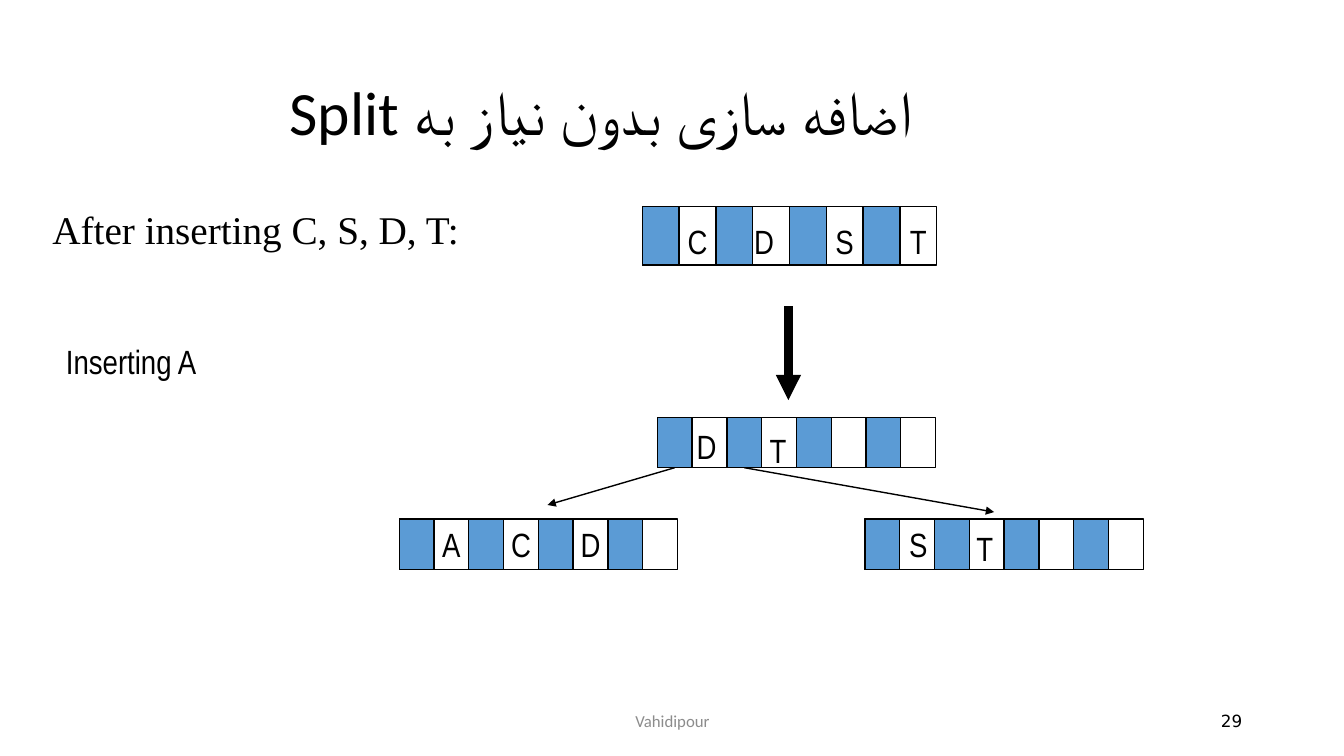
from pptx import Presentation
from pptx.dml.color import RGBColor
from pptx.enum.shapes import MSO_CONNECTOR, MSO_SHAPE
from pptx.enum.text import MSO_ANCHOR, PP_ALIGN
from pptx.oxml.ns import qn
from pptx.util import Inches, Pt
from lxml import etree

BLACK = RGBColor(0, 0, 0)
BLUE = RGBColor(0x5B, 0x9B, 0xD5)
GREY = RGBColor(0x8C, 0x8C, 0x8C)
RECT = MSO_SHAPE.RECTANGLE
STRAIGHT = MSO_CONNECTOR.STRAIGHT
CENTER, RIGHT = PP_ALIGN.CENTER, PP_ALIGN.RIGHT
TOP, MIDDLE = MSO_ANCHOR.TOP, MSO_ANCHOR.MIDDLE
BOTTOM = 2
SLOTS = 4


def add_text(slide, box, text, size=24, font="Arial Narrow", color=BLACK,
             align=CENTER, anchor=TOP, wrap=False):
    frame = slide.shapes.add_textbox(*map(Inches, box)).text_frame
    frame.word_wrap = wrap
    frame.vertical_anchor = anchor
    frame.text = text
    para = frame.paragraphs[0]
    para.alignment = align
    style = para.runs[0].font
    style.size, style.name = Pt(size), font
    style.color.rgb = color
    return para


def add_rect(slide, box, fill=None):
    rect = slide.shapes.add_shape(RECT, *map(Inches, box))
    rect.shadow.inherit = False
    rect.line.color.rgb = BLACK
    rect.line.width = Pt(1)
    if fill is None:
        rect.fill.background()
    else:
        rect.fill.solid()
        rect.fill.fore_color.rgb = fill
    return rect


def add_arrow(slide, start, end, width=1, source=None):
    """Draw an arrow, joined to the bottom of source if there is one."""
    arrow = slide.shapes.add_connector(STRAIGHT, *map(Inches, start + end))
    if source is not None:
        arrow.begin_connect(source, BOTTOM)
    arrow.line.color.rgb = BLACK
    arrow.line.width = Pt(width)
    line = arrow.line._get_or_add_ln()
    etree.SubElement(line, qn("a:tailEnd"), type="triangle")
    etree.SubElement(arrow._element.spPr, qn("a:effectLst"))


def add_node(slide, box, keys):
    """Draw a tree node; keys are (letter, shift right, shift down).

    Return its pointer cells.
    """
    left, top, width, height = box
    pitch = width / SLOTS
    add_rect(slide, box)
    cells = [add_rect(slide, (left + i * pitch, top, pitch / 2, height), BLUE)
             for i in range(SLOTS)]
    for i, (key, right, down) in enumerate(keys):
        mid = left + (i + 0.75) * pitch + right
        add_text(slide, (mid - 0.27, top + down, 0.54, 0.5), key)
    return cells


def add_title(slide, box):
    para = add_text(slide, box, "اضافه سازی بدون نیاز به Split", 44, "Calibri",
                    anchor=MIDDLE, wrap=True)
    para.line_spacing = 0.9
    para._p.get_or_add_pPr().set("rtl", "1")


def add_tree(slide, box):
    left, top, _, _ = box
    size = (2.76, 0.5)
    low = top + 1.01
    foot = top + 0.5
    cells = add_node(slide, (left + 2.56, top, *size),
                     [("D", -0.03, 0.04), ("T", -0.01, 0.08)])
    add_node(slide, (left, low, *size), [(key, 0, 0) for key in "ACD"])
    add_node(slide, (left + 4.62, low, *size),
             [("S", 0.01, 0), ("T", -0.02, 0.04)])
    add_arrow(slide, (left + 2.73, foot), (left + 1.47, low - 0.14),
              source=cells[0])
    add_arrow(slide, (left + 3.42, foot), (left + 5.9, low - 0.07),
              source=cells[1])


def add_footer(slide, box):
    left, top, width, height = box
    add_text(slide, (left, top, 4.5, height), "Vahidipour", 12, "Calibri",
             GREY, anchor=MIDDLE, wrap=True)
    add_text(slide, (left + width - 3, top, 3, height), "29", 12,
             "DejaVu Sans", align=RIGHT, anchor=MIDDLE, wrap=True)


def main():
    deck = Presentation()
    deck.slide_width, deck.slide_height = Inches(13.33), Inches(7.5)
    slide = deck.slides.add_slide(deck.slide_layouts[6])
    add_title(slide, (2.33, 0.52, 7.24, 1.25))
    add_text(slide, (0.4, 1.99, 4.27, 0.57), "After inserting C, S, D, T:",
             28, "Times New Roman")
    add_node(slide, (6.37, 2.05, 2.92, 0.58),
             [("C", 0, 0.09), ("D", -0.07, 0.09),
              ("S", 0, 0.09), ("T", 0, 0.09)])
    add_arrow(slide, (7.82, 3.04), (7.82, 3.97), 6)
    add_text(slide, (0.4, 3.33, 1.8, 0.5), "Inserting A")
    add_tree(slide, (3.96, 4.14, 7.38, 1.51))
    add_footer(slide, (4.42, 6.95, 8, 0.4))
    deck.save("out.pptx")


if __name__ == "__main__":
    main()
